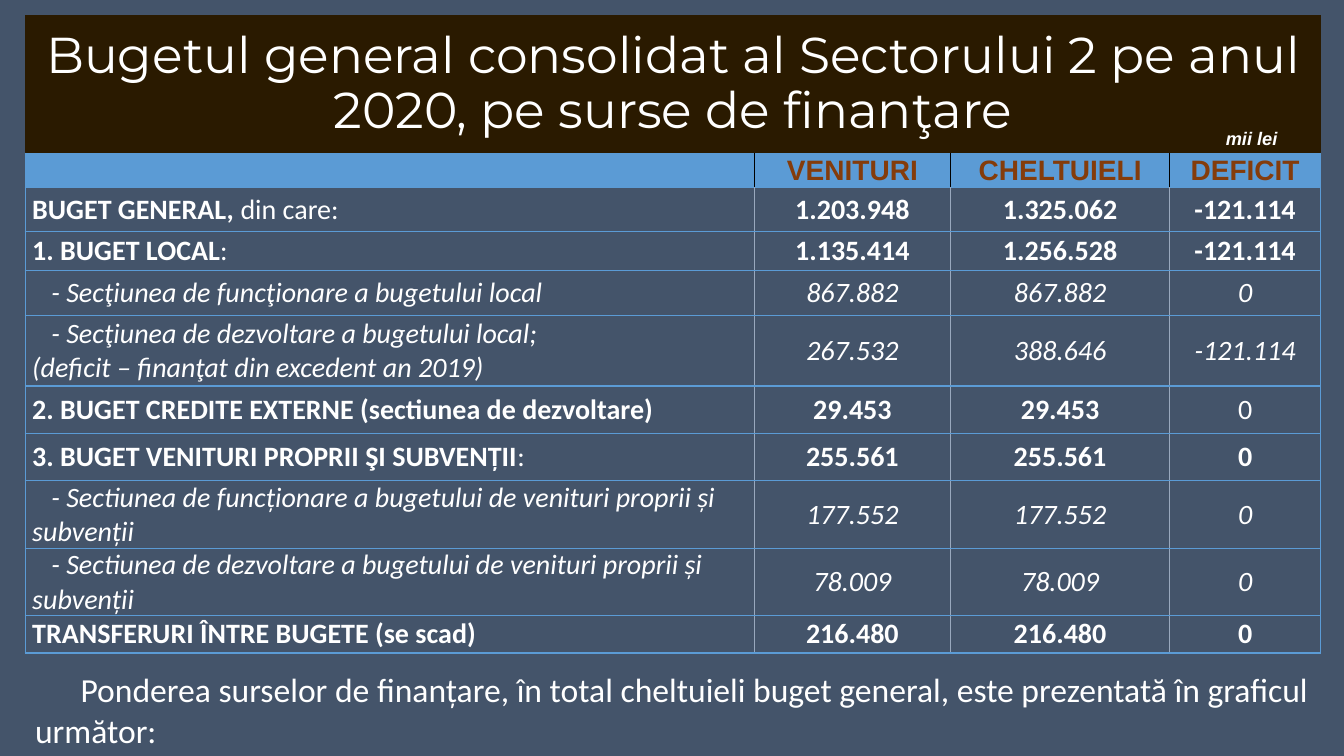
from dataclasses import dataclass

from lxml.etree import SubElement
from pptx import Presentation
from pptx.dml.color import RGBColor
from pptx.enum.shapes import MSO_SHAPE
from pptx.enum.text import MSO_ANCHOR, PP_ALIGN
from pptx.oxml.ns import qn
from pptx.util import Inches, Pt

TITLE = "Bugetul general consolidat al Sectorului 2 pe anul 2020, pe surse de finanţare"
UNIT = "mii lei"
NOTE = ("Ponderea surselor de finanțare, în total cheltuieli buget general, "
        "este prezentată în graficul următor:")
HEADERS = ["", "VENITURI", "CHELTUIELI", "DEFICIT"]
# label runs as (text, style), amounts, amount styles, row height
# styles: "b" bold, "i" italic, "" regular; a newline is a line break
ROWS = [
    ([("BUGET GENERAL, ", "b"), ("din care:", "")],
     ["1.203.948", "1.325.062", "-121.114"], "bbb", 0.44),
    ([("1. BUGET LOCAL", "b"), (":", "")],
     ["1.135.414", "1.256.528", "-121.114"], "bbb", 0.38),
    ([("- Secţiunea de funcţionare a bugetului local", "i")],
     ["867.882", "867.882", "0"], "iii", 0.45),
    ([("- Secţiunea de dezvoltare a bugetului local;\n"
       "(deficit – finanţat din excedent an 2019)", "i")],
     ["267.532", "388.646", "-121.114"], "iii", 0.7),
    ([("2. BUGET CREDITE EXTERNE (sectiunea de dezvoltare)", "b")],
     ["29.453", "29.453", "0"], ["b", "b", ""], 0.47),
    ([("3. BUGET VENITURI PROPRII ŞI SUBVENȚII", "b"), (":", "")],
     ["255.561", "255.561", "0"], "bbb", 0.47),
    ([("- Sectiunea de funcționare a bugetului de venituri proprii și subvenții", "i")],
     ["177.552", "177.552", "0"], "iii", 0.67),
    ([("- Sectiunea de dezvoltare a bugetului de venituri proprii și subvenții", "i")],
     ["78.009", "78.009", "0"], "iii", 0.67),
    ([("TRANSFERURI ÎNTRE BUGETE (se scad)", "b")],
     ["216.480", "216.480", "0"], "bbb", 0.37),
]
COL_WIDTHS = [7.23, 1.95, 2.17, 1.5]
HEADER_HEIGHT = 0.34
LEFT, WIDTH = 0.25, 12.85


@dataclass(frozen=True)
class Theme:
    background: str = "44546A"
    title_fill: str = "2A1A00"
    text: str = "FFFFFF"
    header_text: str = "843C0B"
    accent: str = "5B9BD5"
    divider: str = "99A8BD"
    header_divider: str = "000000"
    title_font: str = "Montserrat"
    label_font: str = "Arial"
    body_font: str = "Calibri"
    title_size: int = 36
    note_size: int = 24
    table_size: int = 20
    unit_size: int = 13


T = Theme()


def rgb(value):
    return RGBColor.from_string(value)


def add_run(p, text, font, size, color=T.text, style=""):
    """Add text to p, turning newlines into line breaks."""
    for i, line in enumerate(text.split("\n")):
        if i:
            p.add_line_break()
        r = p.add_run()
        r.text = line
        r.font.name, r.font.size = font, Pt(size)
        r.font.color.rgb = rgb(color)
        r.font.bold, r.font.italic = "b" in style, "i" in style


def indent_first_line(p, inches):
    pPr = p._p.get_or_add_pPr()
    pPr.set("marL", "0")
    pPr.set("indent", str(Inches(inches)))


def add_text(s, box, text, font, size, indent, style=""):
    tf = s.shapes.add_textbox(*map(Inches, box)).text_frame
    tf.word_wrap = True
    p = tf.paragraphs[0]
    indent_first_line(p, indent)
    add_run(p, text, font, size, style=style)


def set_borders(cell, colors):
    """Draw 1 pt borders; colors run left, right, top, bottom."""
    tcPr = cell._tc.get_or_add_tcPr()
    for side, color in zip("LRTB", colors):
        ln = SubElement(tcPr, qn(f"a:ln{side}"), w=str(Pt(1)))
        fill = SubElement(ln, qn("a:solidFill"))
        SubElement(fill, qn("a:srgbClr"), val=color)


def prepare_cell(cell, row, col):
    """Set borders, fill, margins and alignment; return the paragraph."""
    inner = T.divider if row else T.header_divider
    left = inner if col else T.accent
    right = inner if col < len(COL_WIDTHS) - 1 else T.accent
    set_borders(cell, (left, right, T.accent, T.accent))
    if row:
        cell.fill.background()
    else:
        cell.fill.solid()
        cell.fill.fore_color.rgb = rgb(T.accent)
    cell.margin_left = cell.margin_right = Inches(0.07)
    cell.margin_top = cell.margin_bottom = 0
    cell.vertical_anchor = MSO_ANCHOR.MIDDLE
    p = cell.text_frame.paragraphs[0]
    p.alignment = PP_ALIGN.CENTER if col else PP_ALIGN.LEFT
    return p


def add_title(s):
    sp = s.shapes.add_shape(MSO_SHAPE.RECTANGLE, *map(Inches, (LEFT, 0.15, WIDTH, 1.38)))
    sp.shadow.inherit = False
    sp.fill.solid()
    sp.fill.fore_color.rgb = rgb(T.title_fill)
    sp.line.fill.background()
    tf = sp.text_frame
    tf.word_wrap = True
    tf.vertical_anchor = MSO_ANCHOR.MIDDLE
    p = tf.paragraphs[0]
    p.alignment, p.line_spacing = PP_ALIGN.CENTER, 0.9
    add_run(p, TITLE, T.title_font, T.title_size)


def add_budget_table(s):
    heights = [HEADER_HEIGHT] + [row[-1] for row in ROWS]
    box = (LEFT, 1.52, WIDTH, sum(heights))
    table = s.shapes.add_table(len(heights), len(COL_WIDTHS), *map(Inches, box)).table
    table.first_row = table.horz_banding = False
    for column, width in zip(table.columns, COL_WIDTHS):
        column.width = Inches(width)
    for row, height in zip(table.rows, heights):
        row.height = Inches(height)

    for col, text in enumerate(HEADERS):
        p = prepare_cell(table.cell(0, col), 0, col)
        if text:
            add_run(p, text, T.label_font, T.table_size, T.header_text, "b")
    for row, (label, amounts, styles, _) in enumerate(ROWS, 1):
        amount_runs = [[pair] for pair in zip(amounts, styles)]
        for col, runs in enumerate([label] + amount_runs):
            p = prepare_cell(table.cell(row, col), row, col)
            if col == 0 and runs[0][0].startswith("- "):
                indent_first_line(p, 0.19)
            for text, style in runs:
                add_run(p, text, T.body_font, T.table_size, style=style)


def main():
    prs = Presentation()
    prs.slide_width, prs.slide_height = Inches(13.33), Inches(7.5)
    s = prs.slides.add_slide(prs.slide_layouts[6])
    s.background.fill.solid()
    s.background.fill.fore_color.rgb = rgb(T.background)
    add_title(s)
    add_text(s, (11.96, 1.21, 1.38, 0.62), UNIT, T.label_font, T.unit_size, 0.1, "bi")
    add_budget_table(s)
    add_text(s, (LEFT, 6.59, WIDTH, 0.91), NOTE, T.body_font, T.note_size, 0.45)
    prs.save("out.pptx")


if __name__ == "__main__":
    main()
